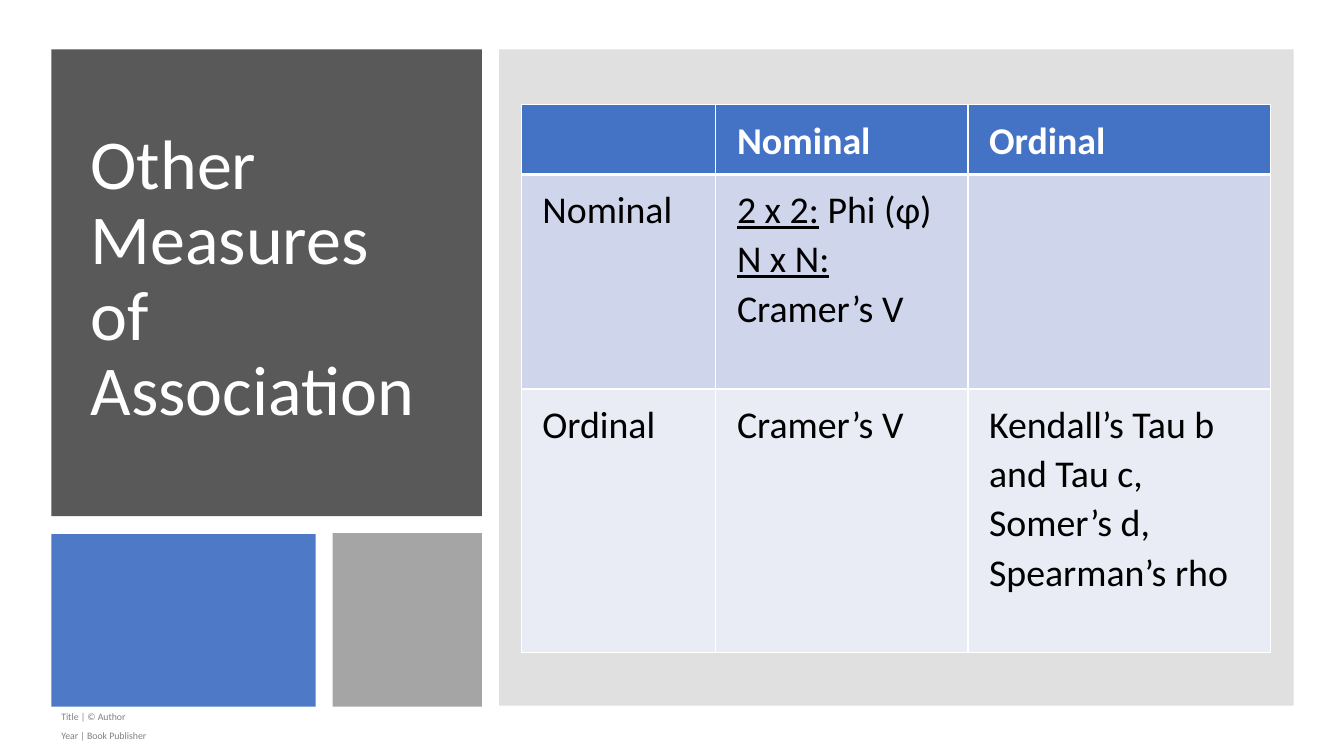
from pptx import Presentation
from pptx.dml.color import RGBColor as RGB
from pptx.enum.shapes import MSO_SHAPE as SHAPE
from pptx.enum.text import MSO_ANCHOR as ANCHOR
from pptx.oxml.ns import qn
from pptx.util import Pt
from lxml.etree import SubElement

PX = 9144  # 100 px to the inch
FONT = "Calibri"
COLORS = {
    "white": "FFFFFF", "black": "000000", "dark": "595959",
    "blue": "4472C4", "gray": "7F7F7F", "silver": "A5A5A5",
    "footer": "808080", "band1": "CFD5EA", "band2": "E9EBF5",
}

PANELS = [  # left, top, width, height, colour, opacity %
    (51, 49, 427, 463, "dark", 100),
    (51, 530, 262, 171, "blue", 95),
    (495, 49, 788, 651, "gray", 24),
    (330, 529, 148, 172, "silver", 100),
]
COLUMNS = [193, 250, 300]
ROWS = [69, 213, 261]
ROW_FILLS = ["blue", "band1", "band2"]
# A cell is a list of paragraphs; a paragraph is a list of (text, underlined).
CELLS = [
    [[], [[("Nominal", False)]], [[("Ordinal", False)]]],
    [[[("Nominal", False)]],
     [[("2 x 2:", True), (" Phi (φ)", False)],
      [("N x N:", True), (" Cramer’s V", False)]],
     []],
    [[[("Ordinal", False)]],
     [[("Cramer’s V", False)]],
     [[("Kendall’s Tau b and Tau c, Somer’s d, Spearman’s rho", False)]]],
]


def rgb(name):
    return RGB.from_string(COLORS[name])


def emu(*lengths):
    return [n * PX for n in lengths]


def set_attrs(obj, values):
    for name, value in values.items():
        setattr(obj, name, value)


def write(tf, paragraphs, color, para_format, font_format):
    for i, runs in enumerate(paragraphs):
        p = tf.add_paragraph() if i else tf.paragraphs[0]
        set_attrs(p, para_format)
        for text, underlined in runs:
            r = p.add_run()
            r.text = text
            set_attrs(r.font, {"name": FONT, "underline": underlined, **font_format})
            r.font.color.rgb = rgb(color)


def add_panel(slide, left, top, width, height, color, opacity):
    sp = slide.shapes.add_shape(SHAPE.RECTANGLE, *emu(left, top, width, height))
    sp.shadow.inherit = False
    sp.line.fill.background()
    sp.fill.solid()
    sp.fill.fore_color.rgb = rgb(color)
    if opacity < 100:
        clr = sp.fill._xPr.find(".//" + qn("a:srgbClr"))
        SubElement(clr, qn("a:alpha"), val=str(opacity * 1000))


def add_text(slide, box, lines, color, para_format, font_format):
    tf = slide.shapes.add_textbox(*emu(*box)).text_frame
    set_attrs(tf, {"word_wrap": True, "vertical_anchor": ANCHOR.MIDDLE})
    write(tf, [[(line, False)] for line in lines], color, para_format, font_format)


def add_borders(cell, widths):
    """Draw white borders; widths maps a side (L, R, T, B) to points."""
    tc_pr = cell._tc.get_or_add_tcPr()
    for i, (side, width) in enumerate(widths.items()):
        ln = tc_pr.makeelement(qn("a:ln" + side), {"w": str(Pt(width))})
        fill = SubElement(ln, qn("a:solidFill"))
        SubElement(fill, qn("a:srgbClr"), val=COLORS["white"])
        tc_pr.insert(i, ln)


def add_measures_table(slide, left, top):
    box = emu(left, top, sum(COLUMNS), sum(ROWS))
    table = slide.shapes.add_table(len(ROWS), len(COLUMNS), *box).table
    set_attrs(table, {"first_row": False, "horz_banding": False})
    for col, width in zip(table.columns, COLUMNS):
        col.width = width * PX
    for i, (row, height) in enumerate(zip(table.rows, ROWS)):
        row.height = height * PX
        header = i == 0
        for cell, paragraphs in zip(row.cells, CELLS[i]):
            cell.fill.solid()
            cell.fill.fore_color.rgb = rgb(ROW_FILLS[i])
            set_attrs(cell, {"margin_left": 21 * PX, "margin_right": 21 * PX,
                             "margin_top": 10 * PX, "margin_bottom": 10 * PX})
            write(cell.text_frame, paragraphs, "white" if header else "black",
                  {"line_spacing": 1.07}, {"size": Pt(27), "bold": header})
            add_borders(cell, {"L": 1, "R": 1, "T": 3 if i == 1 else 1,
                               "B": 3 if header else 1})


def main():
    prs = Presentation()
    set_attrs(prs, {"slide_width": 1333 * PX, "slide_height": 750 * PX})
    slide = prs.slides.add_slide(prs.slide_layouts[6])
    for panel in PANELS:
        add_panel(slide, *panel)
    add_text(slide, (80, 122, 368, 311), ["Other Measures of Association"], "white",
             {"line_spacing": 0.9}, {"size": Pt(50)})
    add_text(slide, (51, 701, 730, 40), ["Title | © Author", "Year | Book Publisher"],
             "footer", {"line_spacing": 0.9, "space_after": Pt(6)}, {"size": Pt(7)})
    add_measures_table(slide, 517, 104)
    prs.save("out.pptx")


if __name__ == "__main__":
    main()
